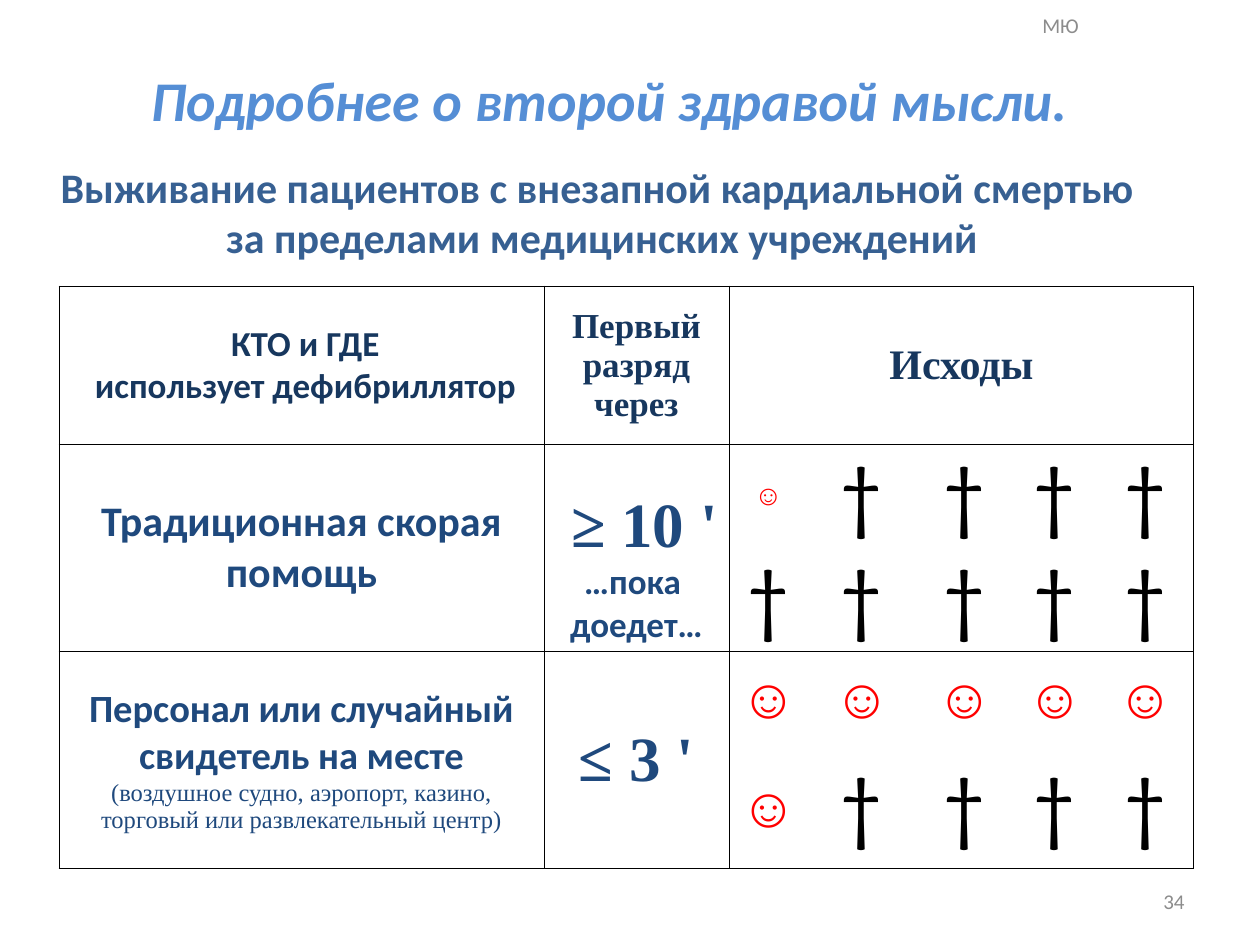
from lxml import etree
from pptx import Presentation
from pptx.dml.color import RGBColor
from pptx.enum.text import MSO_ANCHOR as Anchor, MSO_AUTO_SIZE as AutoSize, PP_ALIGN as Align
from pptx.oxml.ns import qn
from pptx.util import Emu, Pt

SCALE = 914400 // 126  # EMU per px
SANS, SERIF, SYMBOL = "Calibri", "Times New Roman", "Arial"
BLACK, RED, GREY = "000000", "FF0000", "8C8C8C"
NAVY, BLUE, SKY, STEEL = "17375E", "1F497D", "558ED5", "376092"


def bold(text, size, font, colour):
    return text, size, font, colour, True


# Content: a block of text is a list of paragraphs, each one run
TITLE = [bold("Подробнее о второй здравой мысли. ", 32, SANS, SKY)]
SUBTITLE = [bold("Выживание пациентов с внезапной кардиальной смертью ", 24, SANS, STEEL),
            bold("за пределами медицинских учреждений", 24, SANS, STEEL)]
LABELS = [  # text, (left, top, width, height), alignment, anchor
    (SUBTITLE, (44, 155, 1116, 115), Align.CENTER, Anchor.TOP),
    ([("МЮ", 12, SANS, GREY, False)], (861, 0, 399, 50), Align.CENTER, Anchor.MIDDLE),
    ([("34", 12, SANS, GREY, False)], (903, 876, 294, 50), Align.RIGHT, Anchor.MIDDLE),
]

COLUMNS = [485, 185, 79, 108, 97, 84, 97]
ROWS = [158, 94, 84, 96, 121]
TABLE_LEFT, TABLE_TOP = 59, 286
ROW_EDGES, COLUMN_EDGES = {0, 1, 3, 5}, {0, 1, 2, 7}  # where lines are drawn
MERGES = [(0, 2, 0, 6), (1, 0, 2, 0), (1, 1, 2, 1), (3, 0, 4, 0), (3, 1, 4, 1)]
CELLS = {
    (0, 0): [bold(" КТО и ГДЕ", 20, SANS, NAVY),
             bold(" использует дефибриллятор", 20, SANS, NAVY)],
    (0, 1): [bold("Первый разряд через", 20, SERIF, NAVY)],
    (0, 2): [bold("Исходы", 24, SERIF, NAVY)],
    (1, 0): [bold("Традиционная скорая помощь", 24, SANS, BLUE)],
    (1, 1): [bold(" ≥ 10 '", 36, SERIF, BLUE),
             bold("…пока ", 20, SANS, BLUE),
             bold("доедет…", 20, SANS, BLUE)],
    (3, 0): [bold("Персонал или случайный свидетель на месте", 22, SANS, BLUE),
             ("(воздушное судно, аэропорт, казино, торговый или развлекательный центр)",
              14, SERIF, BLUE, False)],
    (3, 1): [bold("≤ 3 '", 36, SERIF, BLUE)],
}
OUTCOMES = ["☺††††", "†††††", "☺☺☺☺☺", "☺††††"]
SMALL_SMILE = (1, 2)
for row, marks in enumerate(OUTCOMES, start=1):
    for column, mark in enumerate(marks, start=2):
        if mark == "†":
            CELLS[row, column] = [(mark, 48, SANS, BLACK, False)]
        else:
            size = 16 if (row, column) == SMALL_SMILE else 32
            CELLS[row, column] = [bold(mark, size, SYMBOL, RED)]


def px(value):
    return Emu(value * SCALE)


def rgb(colour):
    return RGBColor.from_string(colour)


def write(frame, paragraphs, align=Align.CENTER):
    for index, (text, size, font, colour, is_bold) in enumerate(paragraphs):
        para = frame.add_paragraph() if index else frame.paragraphs[0]
        para.alignment = align
        span = para.add_run()
        span.text = text
        span.font.size, span.font.name, span.font.bold = Pt(size), font, is_bold
        span.font.color.rgb = rgb(colour)


def set_borders(cell, visible):
    """Draw or hide the left, right, top and bottom lines of a cell."""
    properties = cell._tc.get_or_add_tcPr()
    for index, (side, shown) in enumerate(zip("LRTB", visible)):
        line = etree.Element(qn(f"a:ln{side}"), w=str(Pt(0.5)))
        if shown:
            fill = etree.SubElement(line, qn("a:solidFill"))
            etree.SubElement(fill, qn("a:srgbClr"), val=BLACK)
        else:
            etree.SubElement(line, qn("a:noFill"))
        properties.insert(index, line)


deck = Presentation()
deck.slide_width, deck.slide_height = px(1260), px(945)
page = deck.slides.add_slide(deck.slide_layouts[5])

# Title
title = page.shapes.title
title.left, title.top, title.width, title.height = map(px, (49, 69, 1134, 60))
title.text_frame.auto_size = AutoSize.NONE
title.text_frame.vertical_anchor = Anchor.MIDDLE
write(title.text_frame, TITLE)
title.text_frame.paragraphs[0].runs[0].font.italic = True

# Table of outcomes
table = page.shapes.add_table(len(ROWS), len(COLUMNS), px(TABLE_LEFT), px(TABLE_TOP),
                              px(sum(COLUMNS)), px(sum(ROWS))).table
table.first_row = table.horz_banding = False
for column, width in zip(table.columns, COLUMNS):
    column.width = px(width)
for row, height in zip(table.rows, ROWS):
    row.height = px(height)
for top, left, bottom, right in MERGES:
    table.cell(top, left).merge(table.cell(bottom, right))

for r in range(len(ROWS)):
    for c in range(len(COLUMNS)):
        cell = table.cell(r, c)
        cell.fill.solid()
        cell.fill.fore_color.rgb = rgb("FFFFFF")
        cell.vertical_anchor = Anchor.MIDDLE
        cell.margin_left = cell.margin_right = cell.margin_top = px(1)
        cell.margin_bottom = 0
        right = c + (cell.span_width if cell.is_merge_origin else 1)
        bottom = r + (cell.span_height if cell.is_merge_origin else 1)
        set_borders(cell, (c in COLUMN_EDGES, right in COLUMN_EDGES,
                           r in ROW_EDGES, bottom in ROW_EDGES))
        write(cell.text_frame, CELLS.get((r, c), []))
table.cell(1, 1).margin_top = px(43)  # lowers the text by one line

# Subtitle, header and page number
for paragraphs, place, align, anchor in LABELS:
    box = page.shapes.add_textbox(*map(px, place))
    box.text_frame.word_wrap = True
    box.text_frame.vertical_anchor = anchor
    write(box.text_frame, paragraphs, align)

deck.save("out.pptx")
